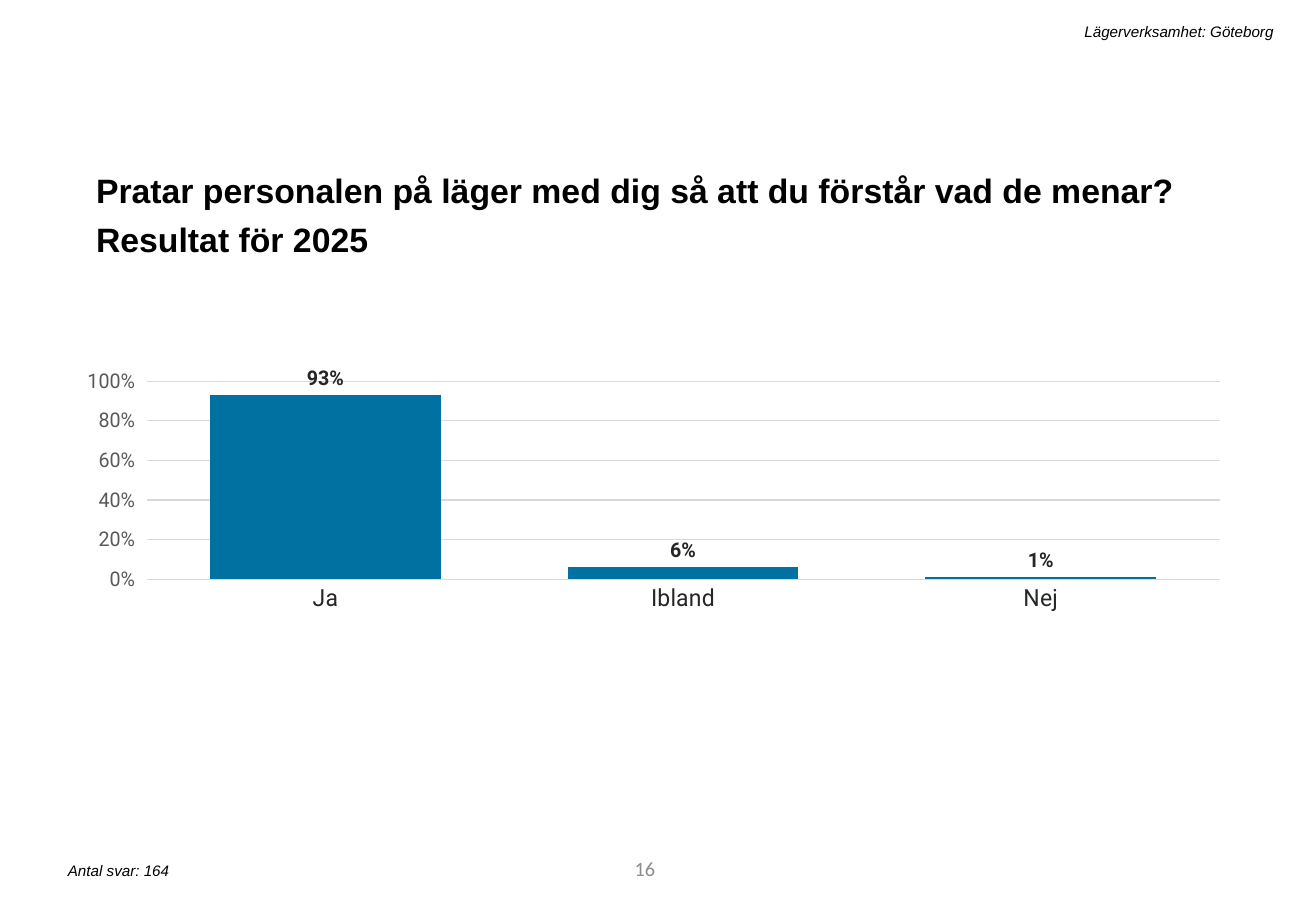
from lxml.etree import SubElement
from pptx import Presentation
from pptx.chart.data import CategoryChartData
from pptx.dml.color import RGBColor
from pptx.enum.chart import XL_CHART_TYPE, XL_LABEL_POSITION, XL_TICK_MARK
from pptx.enum.text import MSO_ANCHOR, MSO_AUTO_SIZE, PP_ALIGN
from pptx.oxml.ns import qn
from pptx.util import Pt


def color(hex_code):
    return RGBColor.from_string(hex_code)


def format_font(font, size, face="Arial", hex_code="000000", bold=False, italic=False):
    font.size = Pt(size)
    font.name = face
    font.bold = bold
    font.italic = italic
    font.color.rgb = color(hex_code)


def write(frame, text, align=PP_ALIGN.LEFT, anchor=MSO_ANCHOR.TOP,
          line_spacing=1.0, space_before=0, **font_format):
    frame.word_wrap = True
    frame.auto_size = MSO_AUTO_SIZE.NONE
    frame.vertical_anchor = anchor
    paragraph = frame.paragraphs[0]
    paragraph.alignment = align
    paragraph.line_spacing = line_spacing
    paragraph.space_before = Pt(space_before)
    run = paragraph.add_run()
    run.text = text
    format_font(run.font, **font_format)


class SurveySlide:
    chart_face = "Roboto"
    bar_color = "0071A1"
    grid_color = "D9D9D9"
    label_color = "262626"
    scale_color = "595959"
    percent = "0%"

    def __init__(self, presentation):
        self.slide = presentation.slides.add_slide(presentation.slide_layouts[5])

    def title(self, text, left, top, width, height):
        question = self.slide.shapes.title
        question.left, question.top = Pt(left), Pt(top)
        question.width, question.height = Pt(width), Pt(height)
        write(question.text_frame, text, size=20, bold=True,
              line_spacing=1.2, space_before=10)

    def text(self, text, left, top, width, height, **text_format):
        box = self.slide.shapes.add_textbox(Pt(left), Pt(top), Pt(width), Pt(height))
        write(box.text_frame, text, **text_format)

    def grid_line(self, line):
        line.color.rgb = color(self.grid_color)
        line.width = Pt(0.75)

    def column_chart(self, shares, left, top, width, height, plot_area):
        answers = CategoryChartData(number_format=self.percent)
        answers.categories = list(shares)
        answers.add_series("Series 1", list(shares.values()))
        chart = self.slide.shapes.add_chart(
            XL_CHART_TYPE.COLUMN_CLUSTERED,
            Pt(left), Pt(top), Pt(width), Pt(height), answers).chart
        chart.has_legend = False
        chart.has_title = False
        format_font(chart.font, 10, self.chart_face)
        self.answer_axis(chart.category_axis)
        self.share_axis(chart.value_axis)
        self.bars(chart.plots[0])
        self.place_plot(chart, plot_area)

    def answer_axis(self, axis):
        axis.major_tick_mark = XL_TICK_MARK.NONE
        axis.minor_tick_mark = XL_TICK_MARK.NONE
        axis.has_major_gridlines = False
        self.grid_line(axis.format.line)
        format_font(axis.tick_labels.font, 14, self.chart_face, self.label_color)

    def share_axis(self, axis):
        axis.minimum_scale, axis.maximum_scale, axis.major_unit = 0, 1, 0.2
        axis.major_tick_mark = XL_TICK_MARK.OUTSIDE
        axis.minor_tick_mark = XL_TICK_MARK.NONE
        axis.format.line.fill.background()
        axis.has_major_gridlines = True
        self.grid_line(axis.major_gridlines.format.line)
        axis.tick_labels.number_format = self.percent
        axis.tick_labels.number_format_is_linked = False
        format_font(axis.tick_labels.font, 12, self.chart_face, self.scale_color)

    def bars(self, plot):
        plot.gap_width = 55
        plot.vary_by_categories = False
        share_series = plot.series[0]
        share_series.format.fill.solid()
        share_series.format.fill.fore_color.rgb = color(self.bar_color)
        labels = share_series.data_labels
        labels.show_value = True
        labels.position = XL_LABEL_POSITION.OUTSIDE_END
        labels.number_format = self.percent
        labels.number_format_is_linked = False
        format_font(labels.font, 12, self.chart_face, self.label_color, bold=True)

    def place_plot(self, chart, plot_area):
        plot_element = chart.plots[0]._element.getparent()
        for old_layout in plot_element.findall(qn("c:layout")):
            plot_element.remove(old_layout)
        layout = SubElement(plot_element, qn("c:layout"))
        plot_element.insert(0, layout)
        manual = SubElement(layout, qn("c:manualLayout"))
        settings = {"layoutTarget": "inner", "xMode": "edge", "yMode": "edge"}
        settings.update(zip("xywh", plot_area))
        for tag, value in settings.items():
            SubElement(manual, qn(f"c:{tag}")).set("val", str(value))


def main():
    presentation = Presentation()
    presentation.slide_width = Pt(779.76)
    presentation.slide_height = Pt(540)
    survey = SurveySlide(presentation)
    survey.title("Pratar personalen på läger med dig så att du förstår vad de menar? "
                 "Resultat för 2025", 49.7, 92.2, 676.8, 62.6)
    survey.column_chart({"Ja": 0.93, "Ibland": 0.06, "Nej": 0.01},
                        51.8, 182.2, 676.8, 284.4,
                        plot_area=(0.025, 0.154, 0.966, 0.413))
    survey.text("16", 219.6, 500.4, 175.7, 28.8, size=12, face="Calibri",
                hex_code="8C8C8C", align=PP_ALIGN.RIGHT, anchor=MSO_ANCHOR.MIDDLE)
    survey.text("Antal svar: 164", 33.1, 506.9, 317.5, 18, size=9, italic=True)
    survey.text("Lägerverksamhet: Göteborg", 123.8, 9.4, 637.9, 18,
                size=9, italic=True, align=PP_ALIGN.RIGHT)
    presentation.save("out.pptx")


if __name__ == "__main__":
    main()
